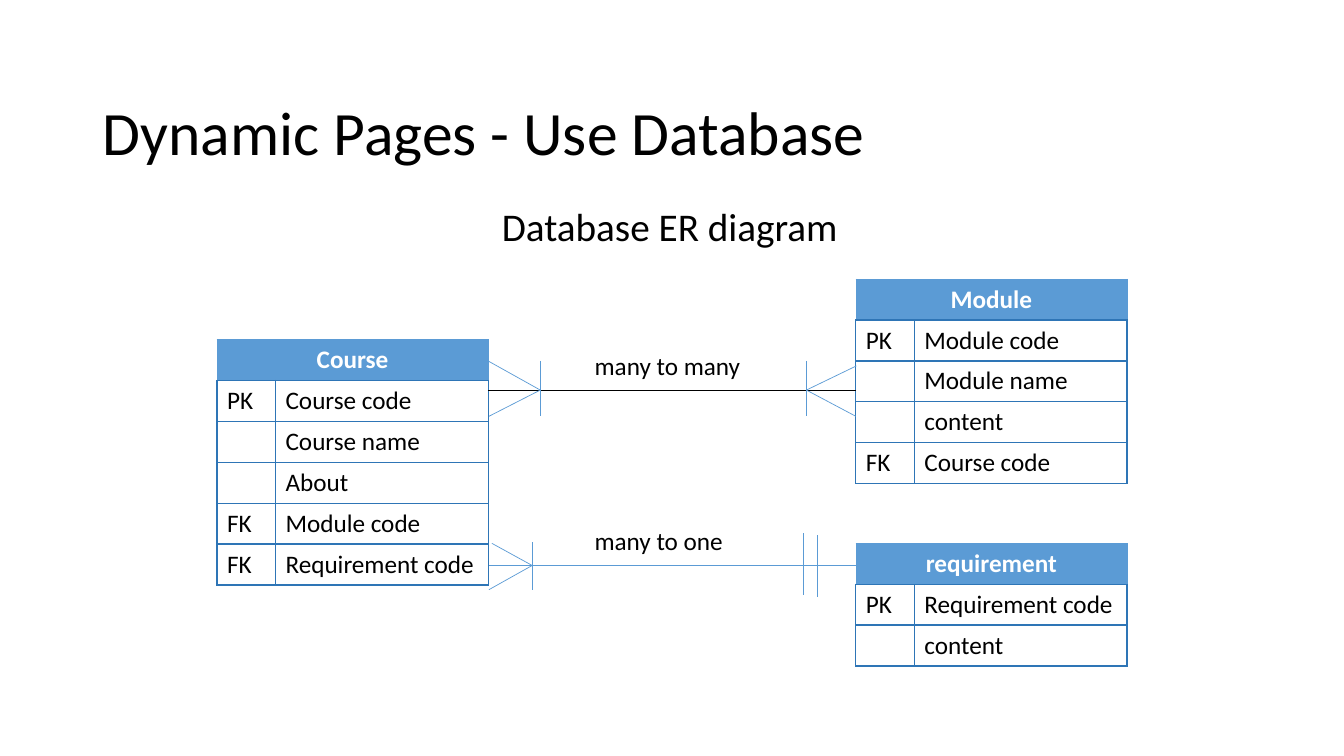
"""Build the slide with the course database ER diagram."""
from dataclasses import dataclass
from typing import Any

import lxml.etree
import pptx
import pptx.dml.color
import pptx.enum.shapes
import pptx.enum.text
import pptx.oxml.ns
import pptx.slide
import pptx.util

HUES = {"text": "000000", "head": "5B9BD5", "edge": "2E75B6", "white": "FFFFFF"}
FONT = "Calibri"
WIDTH, HEIGHT = pptx.util.Inches(13.333), pptx.util.Inches(7.5)
ROW = 5.4
COLS = (4.35, 15.82)
ALIGN = pptx.enum.text.PP_ALIGN


@dataclass
class Label:
    text: str
    left: float
    top: float
    width: float
    height: float
    size: float


@dataclass
class Entity:
    name: str
    left: float
    top: float
    fields: list[tuple[str, str]]


@dataclass
class Line:
    start: tuple[float, float]
    end: tuple[float, float]
    hue: str = "head"


@dataclass
class Foot:
    tip: tuple[float, float]
    span: tuple[float, float]
    upper: tuple[float, float]
    lower: tuple[float, float]


TITLE = Label("Dynamic Pages - Use Database", 6.9, 9.33, 86.25, 17.33, 44)
LABELS = [
    Label("Database ER diagram", 36.6, 26.13, 26.78, 7.6, 28),
    Label("many to many", 43.5, 45.73, 12.6, 5.33, 18),
    Label("many to one", 43.5, 68.8, 11.18, 5.33, 18),
]
TABLES = [
    Entity("Course", 16.15, 44.93, [
        ("PK", "Course code"), ("", "Course name"), ("", "About"),
        ("FK", "Module code"), ("FK", "Requirement code")]),
    Entity("Module", 63.68, 36.93, [
        ("PK", "Module code"), ("", "Module name"), ("", "content"),
        ("FK", "Course code")]),
    Entity("requirement", 63.68, 71.87, [
        ("PK", "Requirement code"), ("", "content")]),
]
LINES = [
    Line((36.3, 51.6), (63.68, 51.6), "text"),
    Line((36.38, 74.8), (63.68, 74.8)),
    Line((59.78, 70.53), (59.78, 78.67)),
    Line((60.83, 70.8), (60.83, 78.93)),
]
FEET = [
    Foot((40.2, 51.6), (47.73, 55.07), (36.3, 47.73), (36.38, 55.07)),
    Foot((60, 51.6), (47.73, 55.07), (63.72, 48.4), (63.68, 55.07)),
    Foot((39.6, 74.8), (71.73, 78), (36.6, 71.87), (36.38, 78)),
]


def across(share: float) -> int:
    return round(WIDTH * share / 100)


def down(share: float) -> int:
    return round(HEIGHT * share / 100)


def paint(name: str) -> pptx.dml.color.RGBColor:
    return pptx.dml.color.RGBColor.from_string(HUES[name])


def write(frame: Any, text: str, size: float, hue: str = "text",
          bold: bool = False, align: Any = ALIGN.LEFT) -> None:
    frame.text = text
    para = frame.paragraphs[0]
    para.alignment = align
    for run in para.runs:
        run.font.name = FONT
        run.font.size = pptx.util.Pt(size)
        run.font.bold = bold
        run.font.color.rgb = paint(hue)


def draw_title(slide: pptx.slide.Slide, label: Label) -> None:
    title = slide.shapes.title
    title.left, title.top = across(label.left), down(label.top)
    title.width, title.height = across(label.width), down(label.height)
    frame = title.text_frame
    write(frame, label.text, label.size)
    frame.vertical_anchor = pptx.enum.text.MSO_ANCHOR.MIDDLE
    frame.paragraphs[0].line_spacing = 0.9


def draw_label(slide: pptx.slide.Slide, label: Label) -> None:
    box = slide.shapes.add_textbox(across(label.left), down(label.top),
                                   across(label.width), down(label.height))
    box.text_frame.word_wrap = False
    write(box.text_frame, label.text, label.size)


def border(cell: Any, side: str, hue: str, points: float) -> None:
    name = pptx.oxml.ns.qn
    props = cell._tc.get_or_add_tcPr()
    line = lxml.etree.SubElement(props, name(f"a:ln{side}"),
                                 w=str(pptx.util.Pt(points)))
    fill = lxml.etree.SubElement(line, name("a:solidFill"))
    lxml.etree.SubElement(fill, name("a:srgbClr"), val=HUES[hue])


def draw_table(slide: pptx.slide.Slide, entity: Entity) -> None:
    rows = [(entity.name, ""), *entity.fields]
    frame = slide.shapes.add_table(
        len(rows), len(COLS), across(entity.left), down(entity.top),
        across(sum(COLS)), down(ROW * len(rows)))
    table = frame.table
    table.first_row = table.horz_banding = False
    for col, width in zip(table.columns, COLS):
        col.width = across(width)
    table.cell(0, 0).merge(table.cell(0, 1))
    for i, texts in enumerate(rows):
        table.rows[i].height = down(ROW)
        for j, text in enumerate(texts):
            cell = table.cell(i, j)
            for side in "LRTB":
                if i == 0 and side != "B":
                    border(cell, side, "head", 0.5)
                else:
                    border(cell, side, "edge", 1)
            if i == 0:
                cell.fill.solid()
                cell.fill.fore_color.rgb = paint("head")
                write(cell.text_frame, text, 18, "white", True, ALIGN.CENTER)
            else:
                cell.fill.background()
                write(cell.text_frame, text, 18)


def draw_line(slide: pptx.slide.Slide, line: Line) -> None:
    (left, top), (right, low) = line.start, line.end
    wire = slide.shapes.add_connector(
        pptx.enum.shapes.MSO_CONNECTOR.STRAIGHT,
        across(left), down(top), across(right), down(low))
    wire.line.color.rgb = paint(line.hue)
    wire.line.width = pptx.util.Pt(0.5)
    lxml.etree.SubElement(wire._element.spPr, pptx.oxml.ns.qn("a:effectLst"))


def draw_foot(slide: pptx.slide.Slide, foot: Foot) -> None:
    side = foot.tip[0]
    top, low = foot.span
    draw_line(slide, Line((side, top), (side, low)))
    for end in (foot.upper, foot.lower):
        draw_line(slide, Line(foot.tip, end))


def main() -> None:
    deck = pptx.Presentation()
    deck.slide_width, deck.slide_height = WIDTH, HEIGHT
    slide = deck.slides.add_slide(deck.slide_layouts[5])
    draw_title(slide, TITLE)
    for entity in TABLES:
        draw_table(slide, entity)
    for line in LINES:
        draw_line(slide, line)
    for foot in FEET:
        draw_foot(slide, foot)
    for label in LABELS:
        draw_label(slide, label)
    deck.save("out.pptx")


if __name__ == "__main__":
    main()
